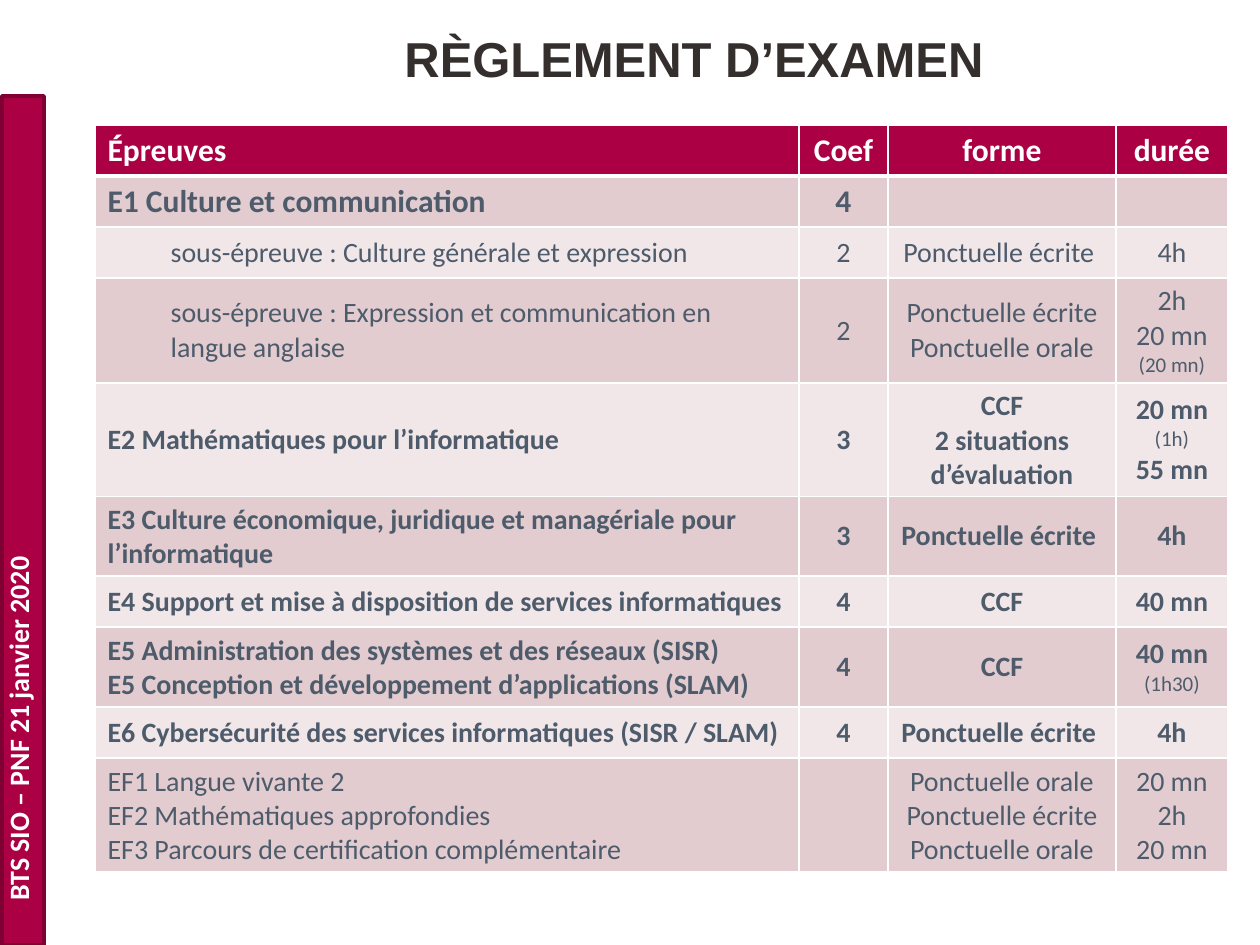
from dataclasses import dataclass

from lxml import etree
from pptx import Presentation
from pptx.dml.color import RGBColor
from pptx.enum import shapes, text
from pptx.oxml.ns import qn
from pptx.util import Emu, Pt

PX = 914400 // 126
CRIMSON = RGBColor(0xAB, 0x00, 0x44)
DARK_CRIMSON = RGBColor(0x7F, 0x00, 0x32)
CHARCOAL = RGBColor(0x34, 0x2E, 0x2C)
SLATE = RGBColor(0x4D, 0x5B, 0x6B)
WHITE = RGBColor(0xFF, 0xFF, 0xFF)
BANDS = (RGBColor(0xF1, 0xE7, 0xE9), RGBColor(0xE2, 0xCC, 0xCF))

LEFT, CENTER = text.PP_ALIGN.LEFT, text.PP_ALIGN.CENTER
COL_WIDTHS = (704, 89, 228, 112)
ROW_HEIGHT = 51
NOTE_SIZE = 12


@dataclass(frozen=True)
class Exam:
    """One table row; a line break in a cell starts a new paragraph."""
    name: str
    coef: str
    form: str
    duration: str
    size: int = 16
    bold: bool = True
    indent: int = 0


EXAMS = (
    Exam("Épreuves", "Coef", "forme", "durée", size=18),
    Exam("E1 Culture et communication", "4", "", "", size=18),
    Exam("sous-épreuve : Culture générale et expression", "2",
         "Ponctuelle écrite ", "4h", bold=False, indent=63),
    Exam("sous-épreuve : Expression et communication en langue anglaise", "2",
         "Ponctuelle écrite\nPonctuelle orale", "2h\n20 mn\n(20 mn)",
         bold=False, indent=63),
    Exam("E2 Mathématiques pour l’informatique", "3",
         "CCF\n2 situations\nd’évaluation", "20 mn\n(1h)\n55 mn"),
    Exam("E3 Culture économique, juridique et managériale pour l’informatique",
         "3", "Ponctuelle écrite ", "4h"),
    Exam("E4 Support et mise à disposition de services informatiques",
         "4", "CCF", "40 mn"),
    Exam("E5 Administration des systèmes et des réseaux (SISR)\n"
         "E5 Conception et développement d’applications (SLAM)",
         "4", "CCF", "40 mn\n(1h30)"),
    Exam("E6 Cybersécurité des services informatiques (SISR / SLAM)",
         "4", "Ponctuelle écrite ", "4h"),
    Exam("EF1 Langue vivante 2\nEF2 Mathématiques approfondies\n"
         "EF3 Parcours de certification complémentaire", "",
         "Ponctuelle orale\nPonctuelle écrite\nPonctuelle orale",
         "20 mn\n2h\n20 mn", bold=False),
)


def px(*lengths: int) -> list[Emu]:
    return [Emu(length * PX) for length in lengths]


def put_text(tf, content: str, *, size: int, color: RGBColor, bold: bool = True,
             font: str = "Calibri", align=LEFT, indent: int = 0) -> None:
    """Write one paragraph per line; a line in parentheses is a small note."""
    for i, line in enumerate(content.split("\n")):
        p = tf.paragraphs[0] if i == 0 else tf.add_paragraph()
        p.alignment = align
        if indent:
            p.level = 1
            p._p.get_or_add_pPr().set("marL", str(indent * PX))
            p._p.get_or_add_pPr().set("indent", "0")
        note = line.startswith("(")
        r = p.add_run()
        r.text = line
        r.font.name = font
        r.font.size = Pt(NOTE_SIZE if note else size)
        r.font.bold = bold and not note
        r.font.color.rgb = color


def add_text_box(slide, box: tuple, content: str, *, vert: str = "horz",
                 anchor=text.MSO_ANCHOR.TOP, **style) -> None:
    tf = slide.shapes.add_textbox(*px(*box)).text_frame
    tf.word_wrap = True
    tf.vertical_anchor = anchor
    tf._txBody.bodyPr.set("vert", vert)
    put_text(tf, content, **style)


def set_borders(cell, top: int, bottom: int) -> None:
    """Draw white borders, with top and bottom widths in points."""
    tc_pr = cell._tc.get_or_add_tcPr()
    for side, width in (("L", 1), ("R", 1), ("T", top), ("B", bottom)):
        ln = etree.SubElement(tc_pr, qn(f"a:ln{side}"), w=str(Pt(width)))
        fill = etree.SubElement(ln, qn("a:solidFill"))
        etree.SubElement(fill, qn("a:srgbClr"), val=str(WHITE))


def add_exam_table(slide) -> None:
    frame = slide.shapes.add_table(
        len(EXAMS), len(COL_WIDTHS),
        *px(95, 125, sum(COL_WIDTHS), ROW_HEIGHT * len(EXAMS)))
    table = frame.table
    for column, width in zip(table.columns, px(*COL_WIDTHS)):
        column.width = width
    for i, exam in enumerate(EXAMS):
        table.rows[i].height = Emu(ROW_HEIGHT * PX)
        header = i == 0
        contents = (exam.name, exam.coef, exam.form, exam.duration)
        for j, content in enumerate(contents):
            cell = table.cell(i, j)
            set_borders(cell, top=3 if i == 1 else 1, bottom=3 if header else 1)
            cell.fill.solid()
            cell.fill.fore_color.rgb = CRIMSON if header else BANDS[i % 2]
            cell.vertical_anchor = text.MSO_ANCHOR.MIDDLE
            if content:
                put_text(cell.text_frame, content, size=exam.size,
                         bold=exam.bold, color=WHITE if header else SLATE,
                         align=CENTER if j else LEFT,
                         indent=0 if j else exam.indent)


def add_side_band(slide) -> None:
    sp = slide.shapes.add_shape(shapes.MSO_SHAPE.RECTANGLE, *px(2, 96, 42, 849))
    sp.shadow.inherit = False
    sp.fill.solid()
    sp.fill.fore_color.rgb = CRIMSON
    sp.line.color.rgb = DARK_CRIMSON
    sp.line.width = Pt(2)
    add_text_box(slide, (-5, 44, 59, 869), "BTS SIO – PNF 21 janvier 2020",
                 vert="vert270", size=16, color=WHITE)


def main() -> None:
    prs = Presentation()
    prs.slide_width, prs.slide_height = px(1260, 945)
    slide = prs.slides.add_slide(prs.slide_layouts[6])
    add_side_band(slide)
    add_text_box(slide, (127, 0, 1134, 116), "RÈGLEMENT D’EXAMEN",
                 anchor=text.MSO_ANCHOR.MIDDLE, size=28, color=CHARCOAL,
                 font="Arial", align=CENTER)
    add_exam_table(slide)
    prs.save("out.pptx")


if __name__ == "__main__":
    main()
